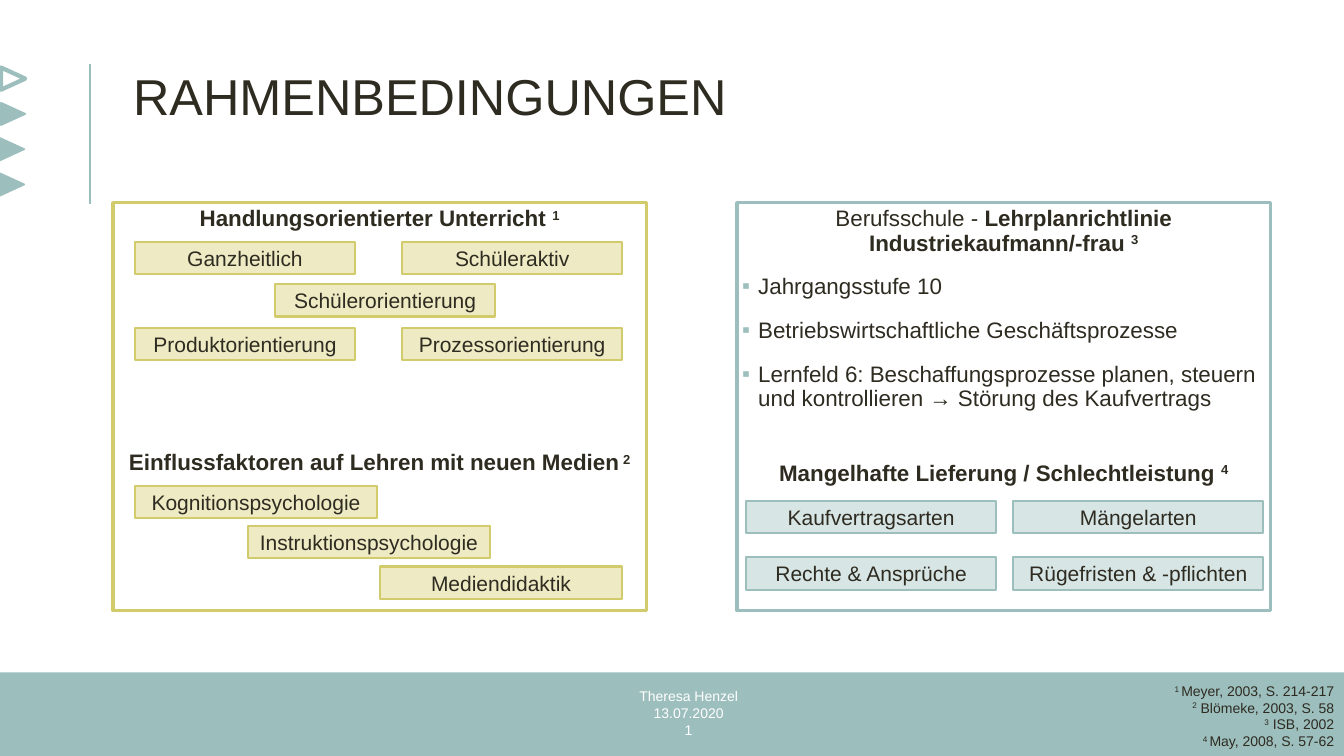
"""Build the slide on the framework conditions of the lesson."""
from lxml import etree
from pptx import Presentation
from pptx import util as u
from pptx.dml.color import RGBColor
from pptx.enum import shapes, text
from pptx.oxml.ns import qn

TEAL, PALE_TEAL = "9CBEBD", "D7E5E5"
OLIVE, PALE_OLIVE = "D2CB6C", "EDEAC4"
INK, WHITE = "2E2B21", "FFFFFF"
RECT = shapes.MSO_SHAPE.RECTANGLE
TRIANGLE = shapes.MSO_SHAPE.ISOSCELES_TRIANGLE
LEFT, CENTER, RIGHT = text.PP_ALIGN.LEFT, text.PP_ALIGN.CENTER, text.PP_ALIGN.RIGHT
TOP, MIDDLE = text.MSO_ANCHOR.TOP, text.MSO_ANCHOR.MIDDLE
color = RGBColor.from_string

deck = Presentation()
deck.slide_width, deck.slide_height = u.Inches(13.33), u.Inches(7.5)
slide = deck.slides.add_slide(deck.slide_layouts[6])


def draw(kind, box, fill=None, line=None, width=1.5):
    """Add a preset shape without shadow."""
    shape = slide.shapes.add_shape(kind, *[u.Inches(v) for v in box])
    shape.shadow.inherit = False
    if fill:
        shape.fill.solid()
        shape.fill.fore_color.rgb = color(fill)
    else:
        shape.fill.background()
    if line:
        shape.line.color.rgb = color(line)
        shape.line.width = u.Pt(width)
    else:
        shape.line.fill.background()
    return shape


def write(shape, paragraphs, size, align=CENTER, anchor=MIDDLE, ink=INK):
    """Fill a shape with paragraphs of (text, style) runs; b is bold, s superscript."""
    frame = shape.text_frame
    frame.word_wrap = True
    frame.vertical_anchor = anchor
    for number, runs in enumerate(paragraphs):
        paragraph = frame.add_paragraph() if number else frame.paragraphs[0]
        paragraph.alignment = align
        for words, style in runs:
            run = paragraph.add_run()
            run.text = words
            run.font.name = "Arial"
            run.font.size = u.Pt(size)
            run.font.color.rgb = color(ink)
            run.font.bold = "b" in style
            if "s" in style:
                run.font._element.set("baseline", "30000")
    return frame


draw(RECT, (0, 6.67, 13.33, 0.83), TEAL)
title_rule = slide.shapes.add_connector(
    shapes.MSO_CONNECTOR.STRAIGHT,
    u.Inches(0.89), u.Inches(2.02), u.Inches(0.89), u.Inches(0.64))
title_rule.line.color.rgb = color(TEAL)
title_rule.line.width = u.Pt(1.5)
etree.SubElement(title_rule._element.spPr, qn("a:effectLst"))

for step, (left, fill, width) in enumerate(
        [(0.02, WHITE, 3), (0.02, TEAL, 1.25), (0.01, TEAL, 1.25), (0.01, TEAL, 1.25)]):
    marker = draw(TRIANGLE, (left, 0.66 + 0.35 * step, 0.22, 0.24), fill, TEAL, width)
    marker.rotation = 90

title = slide.shapes.add_textbox(
    u.Inches(1.12), u.Inches(0.66), u.Inches(11.48), u.Inches(1.09))
title_frame = write(title, [[("RAHMENBEDINGUNGEN", "")]], 36, LEFT, TOP)
title_frame.margin_left = u.Inches(0.2)
title_frame.paragraphs[0].line_spacing = 0.9

teaching = write(draw(RECT, (1.12, 2.01, 5.29, 4.05), None, OLIVE, 2.25), [
    [("Handlungsorientierter Unterricht ", "b"), ("1", "bs")],
    [("Einflussfaktoren auf Lehren mit neuen Medien", "b"), (" 2", "bs")],
], 16, anchor=TOP)

curriculum = write(draw(RECT, (7.31, 2.01, 5.29, 4.05), None, TEAL, 2.25), [
    [("Berufsschule - ", ""), ("Lehrplanrichtlinie Industriekaufmann/-frau ", "b"), ("3", "bs")],
    [("Jahrgangsstufe 10", "")],
    [("Betriebswirtschaftliche Geschäftsprozesse", "")],
    [("Lernfeld 6: Beschaffungsprozesse planen, steuern und kontrollieren "
      "→ Störung des Kaufvertrags", "")],
    [("Mangelhafte Lieferung / Schlechtleistung ", "b"), ("4", "bs")],
], 16, anchor=TOP)
curriculum.margin_left = curriculum.margin_right = u.Inches(0.05)

for panel, gaps in [(teaching, [0, 155]), (curriculum, [0, 12, 12, 12, 34])]:
    for paragraph, gap in zip(panel.paragraphs, gaps):
        paragraph.line_spacing = 0.9
        paragraph.space_before = u.Pt(gap)
        paragraph.space_after = u.Pt(2)

for topic in curriculum.paragraphs[1:4]:
    topic.alignment = LEFT
    properties = topic._p.get_or_add_pPr()
    properties.set("marL", str(u.Inches(0.16)))
    properties.set("indent", str(-u.Inches(0.16)))
    bullet_color = etree.SubElement(properties, qn("a:buClr"))
    etree.SubElement(bullet_color, qn("a:srgbClr"), val=TEAL)
    etree.SubElement(properties, qn("a:buFont"), typeface="Arial")
    etree.SubElement(properties, qn("a:buChar"), char="▪")

tag_groups = [
    (2.18, PALE_OLIVE, OLIVE, [
        ("Ganzheitlich", 1.34, 2.4), ("Schüleraktiv", 3.99, 2.4),
        ("Schülerorientierung", 2.73, 2.82),
        ("Produktorientierung", 1.34, 3.25), ("Prozessorientierung", 3.99, 3.25)]),
    (2.4, PALE_OLIVE, OLIVE, [
        ("Kognitionspsychologie", 1.34, 4.82), ("Instruktionspsychologie", 2.46, 5.22),
        ("Mediendidaktik", 3.77, 5.62)]),
    (2.48, PALE_TEAL, TEAL, [
        ("Kaufvertragsarten", 7.4, 4.97), ("Mängelarten", 10.05, 4.97),
        ("Rechte & Ansprüche", 7.4, 5.53), ("Rügefristen & -pflichten", 10.05, 5.53)]),
]
for width, fill, line, tags in tag_groups:
    for label, left, top in tags:
        write(draw(RECT, (left, top, width, 0.32), fill, line), [[(label, "")]], 15)

author = slide.shapes.add_textbox(
    u.Inches(4.41), u.Inches(6.84), u.Inches(4.84), u.Inches(0.46))
write(author, [[(line, "")] for line in ("Theresa Henzel", "13.07.2020", "1")], 10, ink=WHITE)

sources = slide.shapes.add_textbox(
    u.Inches(7.4), u.Inches(6.72), u.Inches(5.93), u.Inches(0.77))
write(sources, [
    [("1 ", "s"), ("Meyer, 2003, S. 214-217", "")],
    [("2", "s"), (" Blömeke, 2003, S. 58", "")],
    [("3", "s"), (" ISB, 2002", "")],
    [("4 ", "s"), ("May, 2008, S. 57-62", "")],
], 10, RIGHT, TOP)

deck.save("out.pptx")
